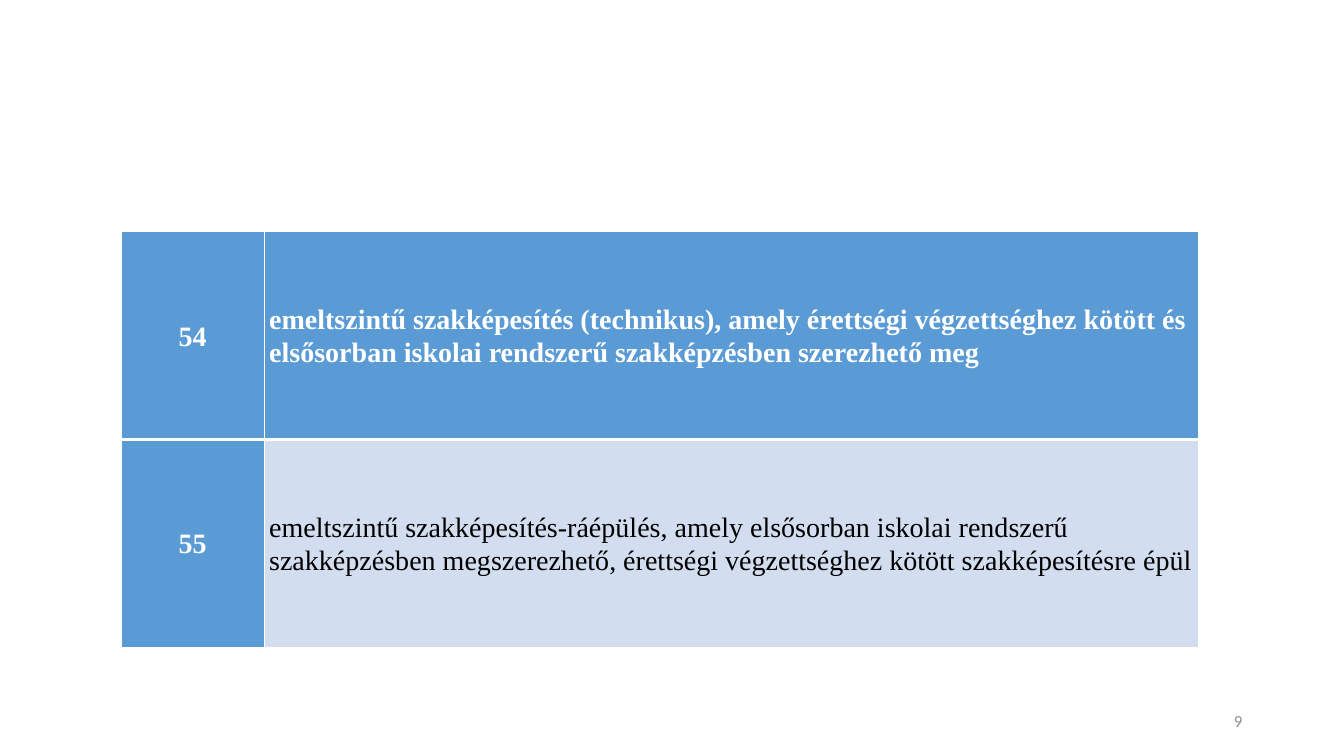
"""Builds a slide with a table of two vocational qualification levels."""
from lxml import etree
from pptx import Presentation
from pptx.dml.color import RGBColor
from pptx.enum.text import MSO_ANCHOR, PP_ALIGN
from pptx.oxml.ns import qn
from pptx.util import Pt

PX = 9144
MID = MSO_ANCHOR.MIDDLE
LEFT, CENTER, RIGHT = PP_ALIGN.LEFT, PP_ALIGN.CENTER, PP_ALIGN.RIGHT
COLORS = {"blue": "5B9BD5", "pale": "D2DEEF", "white": "FFFFFF",
          "black": "000000", "gray": "8C8C8C"}
LEVELS = [
    ("54", "emeltszintű szakképesítés (technikus), amely érettségi végzettséghez "
           "kötött és elsősorban iskolai rendszerű szakképzésben szerezhető meg"),
    ("55", "emeltszintű szakképesítés-ráépülés, amely elsősorban iskolai rendszerű "
           "szakképzésben megszerezhető, érettségi végzettséghez kötött "
           "szakképesítésre épül"),
]


def write(frame, text, font, size, color, align, bold=False):
    frame.text = text
    para = frame.paragraphs[0]
    para.alignment = align
    style = para.runs[0].font
    style.name, style.size, style.bold = font, Pt(size), bold
    style.color.rgb = RGBColor.from_string(COLORS[color])
    return para


def border(cell, sides):
    props = cell._tc.get_or_add_tcPr()
    for spot, (side, width) in enumerate(sides.items()):
        line = etree.Element(qn("a:ln" + side), w=str(Pt(width)))
        fill = etree.SubElement(line, qn("a:solidFill"))
        etree.SubElement(fill, qn("a:srgbClr"), val=COLORS["white"])
        props.insert(spot, line)


prs = Presentation()
prs.slide_width, prs.slide_height = 1333 * PX, 750 * PX
slide = prs.slides.add_slide(prs.slide_layouts[6])

table = slide.shapes.add_table(2, 2, 120 * PX, 230 * PX, 1069 * PX, 412 * PX).table
for col, width in zip(table.columns, (142, 927)):
    col.width = width * PX

for row, texts in enumerate(LEVELS):
    table.rows[row].height = 206 * PX
    for col, text in enumerate(texts):
        cell = table.cell(row, col)
        plain = row == 1 and col == 1
        cell.vertical_anchor = MID
        cell.margin_left = cell.margin_right = 5 * PX
        cell.margin_top = cell.margin_bottom = 0
        cell.fill.solid()
        cell.fill.fore_color.rgb = RGBColor.from_string(COLORS["pale" if plain else "blue"])
        para = write(cell.text_frame, text, "Times New Roman", 20,
                     "black" if plain else "white", LEFT if col else CENTER, not plain)
        para.line_spacing = 1.07
        border(cell, {"L": 1, "R": 1, "T": 3 if row else 1, "B": 1 if row else 3})

number = slide.shapes.add_textbox(942 * PX, 695 * PX, 300 * PX, 40 * PX).text_frame
number.word_wrap = True
number.vertical_anchor = MID
write(number, "9", "Calibri", 12, "gray", RIGHT)

prs.save("out.pptx")
